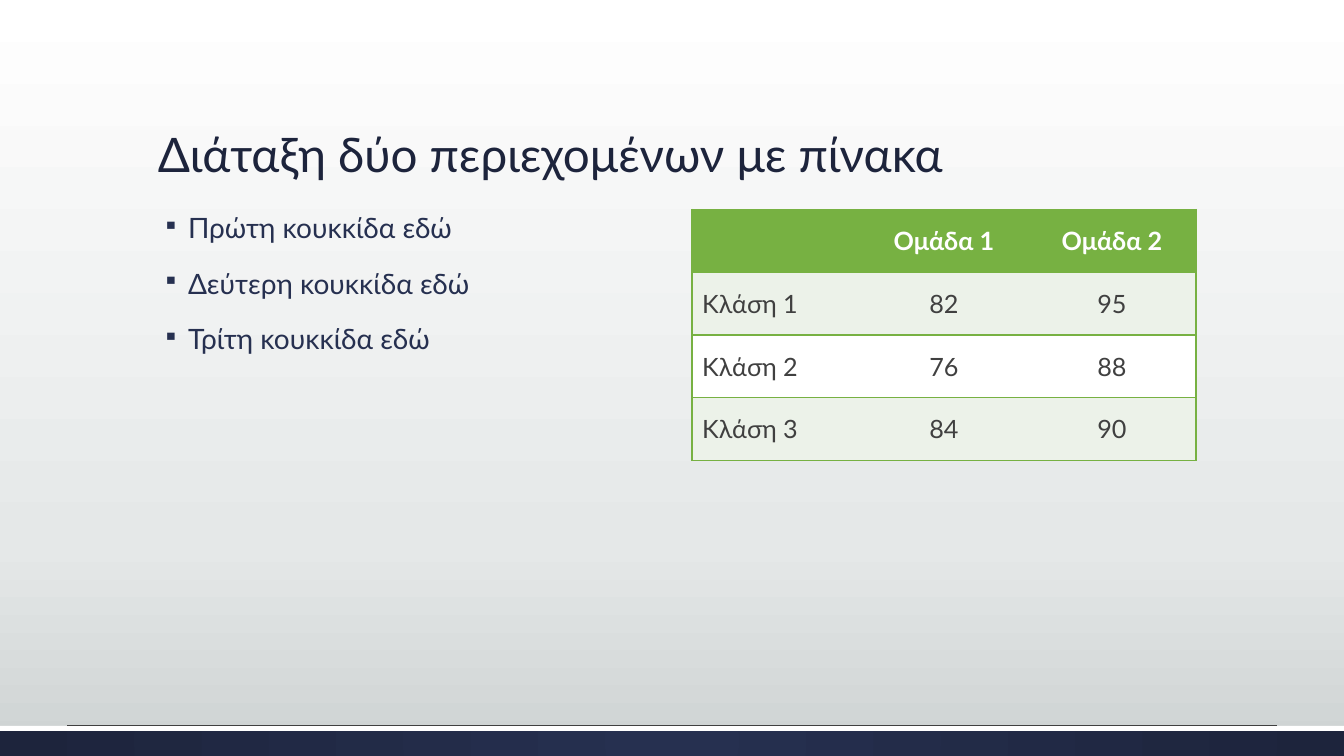
import pptx
import pptx.dml.color
import pptx.enum.shapes
import pptx.enum.text
import pptx.oxml
import pptx.oxml.ns
import pptx.util
from pptx.util import Cm

TITLE = "Διάταξη δύο περιεχομένων με πίνακα"
BULLETS = ["Πρώτη κουκκίδα εδώ", "Δεύτερη κουκκίδα εδώ", "Τρίτη κουκκίδα εδώ"]
TABLE_ROWS = [
    ("", "Ομάδα 1", "Ομάδα 2"),
    ("Κλάση 1", "82", "95"),
    ("Κλάση 2", "76", "88"),
    ("Κλάση 3", "84", "90"),
]

THEME = {
    "font": "Lato",
    "title": {"size": 34, "color": "1D243C"},
    "body": {"size": 20, "color": "263050"},
    "header": {"size": 18, "color": "FFFFFF", "bold": True},
    "cell": {"size": 18, "color": "404040", "bold": False},
    "green": "77B142",
    "bands": ("ECF2E9", "FFFFFF"),
    "white": "FFFFFF",
    "rule": "404040",
    "background": [(0, "FFFFFF"), (72, "E5E8E8"), (100, "CDD2D2")],
    "footer": [(0, "263050"), (100, "1D243C")],
}
DOWNWARD = '<a:lin ang="5400000" scaled="0"/>'
FROM_CENTRE = (
    '<a:path path="circle">'
    '<a:fillToRect l="50000" t="50000" r="50000" b="50000"/></a:path>'
)

SLIDE_WIDTH, SLIDE_HEIGHT = Cm(33.87), Cm(19.05)
MARGIN = Cm(3.73)
CONTENT_TOP = Cm(5.28)
COLUMN_WIDTH = Cm(12.7)
TABLE_HEIGHT = Cm(6.32)
FOOTER_HEIGHT = Cm(0.76)
STRIP_HEIGHT = Cm(0.13)
RULE_INSET = Cm(1.7)


def rgb(color):
    return pptx.dml.color.RGBColor.from_string(color)


def make_xml(tag, attributes="", content=""):
    namespace = pptx.oxml.ns.nsdecls("a")
    return pptx.oxml.parse_xml(f"<a:{tag} {namespace} {attributes}>{content}</a:{tag}>")


def set_format(target, values):
    for name, value in values.items():
        setattr(target, name, value)


def set_gradient(parent, stops, direction):
    solid = parent.find(".//" + pptx.oxml.ns.qn("a:solidFill"))
    colors = "".join(
        f'<a:gs pos="{position * 1000}"><a:srgbClr val="{color}"/></a:gs>'
        for position, color in stops
    )
    gradient = make_xml("gradFill", 'rotWithShape="1"', f"<a:gsLst>{colors}</a:gsLst>{direction}")
    solid.getparent().replace(solid, gradient)


def write(paragraph, text, style, **paragraph_format):
    set_format(paragraph, paragraph_format)
    run = paragraph.add_run()
    run.text = text
    set_format(run.font, {
        "name": THEME["font"],
        "size": pptx.util.Pt(style["size"]),
        "bold": style.get("bold", False),
    })
    run.font.color.rgb = rgb(style["color"])


def add_text_frame(slide, left, top, width, height, anchor):
    frame = slide.shapes.add_textbox(left, top, width, height).text_frame
    set_format(frame, {"word_wrap": True, "vertical_anchor": anchor})
    return frame


def add_band(slide, top, height):
    shape = slide.shapes.add_shape(
        pptx.enum.shapes.MSO_SHAPE.RECTANGLE, 0, top, SLIDE_WIDTH, height
    )
    shape.shadow.inherit = False
    shape.line.fill.background()
    shape.fill.solid()
    shape.fill.fore_color.rgb = rgb(THEME["white"])
    return shape


def add_footer(slide):
    top = SLIDE_HEIGHT - FOOTER_HEIGHT
    footer = add_band(slide, top, FOOTER_HEIGHT)
    set_gradient(footer.element.spPr, THEME["footer"], FROM_CENTRE)
    add_band(slide, top, STRIP_HEIGHT)
    rule = slide.shapes.add_connector(
        pptx.enum.shapes.MSO_CONNECTOR.STRAIGHT,
        RULE_INSET, top, SLIDE_WIDTH - RULE_INSET, top,
    )
    rule.line.width = pptx.util.Pt(0.5)
    rule.line.color.rgb = rgb(THEME["rule"])
    rule.element.spPr.append(make_xml("effectLst"))


def add_bullets(slide):
    frame = add_text_frame(
        slide, MARGIN, CONTENT_TOP, COLUMN_WIDTH, Cm(11.46), pptx.enum.text.MSO_ANCHOR.TOP
    )
    for index, text in enumerate(BULLETS):
        paragraph = frame.add_paragraph() if index else frame.paragraphs[0]
        write(paragraph, text, THEME["body"], line_spacing=0.9, space_before=pptx.util.Pt(18))
        properties = paragraph._p.get_or_add_pPr()
        properties.set("marL", str(Cm(0.76)))
        properties.set("indent", str(-Cm(0.64)))
        properties.append(make_xml("buClr", "", f'<a:srgbClr val="{THEME["body"]["color"]}"/>'))
        properties.append(make_xml("buSzPct", 'val="80000"'))
        properties.append(make_xml("buChar", 'char="▪"'))


def add_borders(cell, sides):
    color = f'<a:solidFill><a:srgbClr val="{THEME["green"]}"/></a:solidFill>'
    for index, side in enumerate(sides):
        border = make_xml(f"ln{side}", f'w="{pptx.util.Pt(1)}"', color)
        cell._tc.get_or_add_tcPr().insert(index, border)


def add_results_table(slide):
    column_count = len(TABLE_ROWS[0])
    left = SLIDE_WIDTH - MARGIN - COLUMN_WIDTH
    table = slide.shapes.add_table(
        len(TABLE_ROWS), column_count, left, CONTENT_TOP, COLUMN_WIDTH, TABLE_HEIGHT
    ).table
    set_format(table, {"first_row": False, "horz_banding": False})
    style_id = table._tbl.tblPr.find(pptx.oxml.ns.qn("a:tableStyleId"))
    style_id.text = "{2D5ABB26-0587-4C30-8999-92F81FD0307C}"
    alignments = pptx.enum.text.PP_ALIGN
    for row, values in enumerate(TABLE_ROWS):
        color = THEME["bands"][(row - 1) % 2] if row else THEME["green"]
        style = THEME["cell"] if row else THEME["header"]
        for column, text in enumerate(values):
            cell = table.cell(row, column)
            cell.vertical_anchor = pptx.enum.text.MSO_ANCHOR.MIDDLE
            cell.fill.solid()
            cell.fill.fore_color.rgb = rgb(color)
            edges = {0: "LTB", column_count - 1: "RTB"}
            add_borders(cell, edges.get(column, "TB"))
            if text:
                alignment = alignments.CENTER if column else alignments.LEFT
                write(cell.text_frame.paragraphs[0], text, style, alignment=alignment)


def main():
    presentation = pptx.Presentation()
    set_format(presentation, {"slide_width": SLIDE_WIDTH, "slide_height": SLIDE_HEIGHT})
    slide = presentation.slides.add_slide(presentation.slide_layouts[6])
    slide.background.fill.solid()
    set_gradient(slide.element, THEME["background"], DOWNWARD)
    add_footer(slide)
    title = add_text_frame(
        slide, MARGIN, Cm(1.3), SLIDE_WIDTH - 2 * MARGIN, Cm(3.43),
        pptx.enum.text.MSO_ANCHOR.BOTTOM,
    )
    write(title.paragraphs[0], TITLE, THEME["title"], line_spacing=0.9)
    add_bullets(slide)
    add_results_table(slide)
    presentation.save("out.pptx")


if __name__ == "__main__":
    main()
